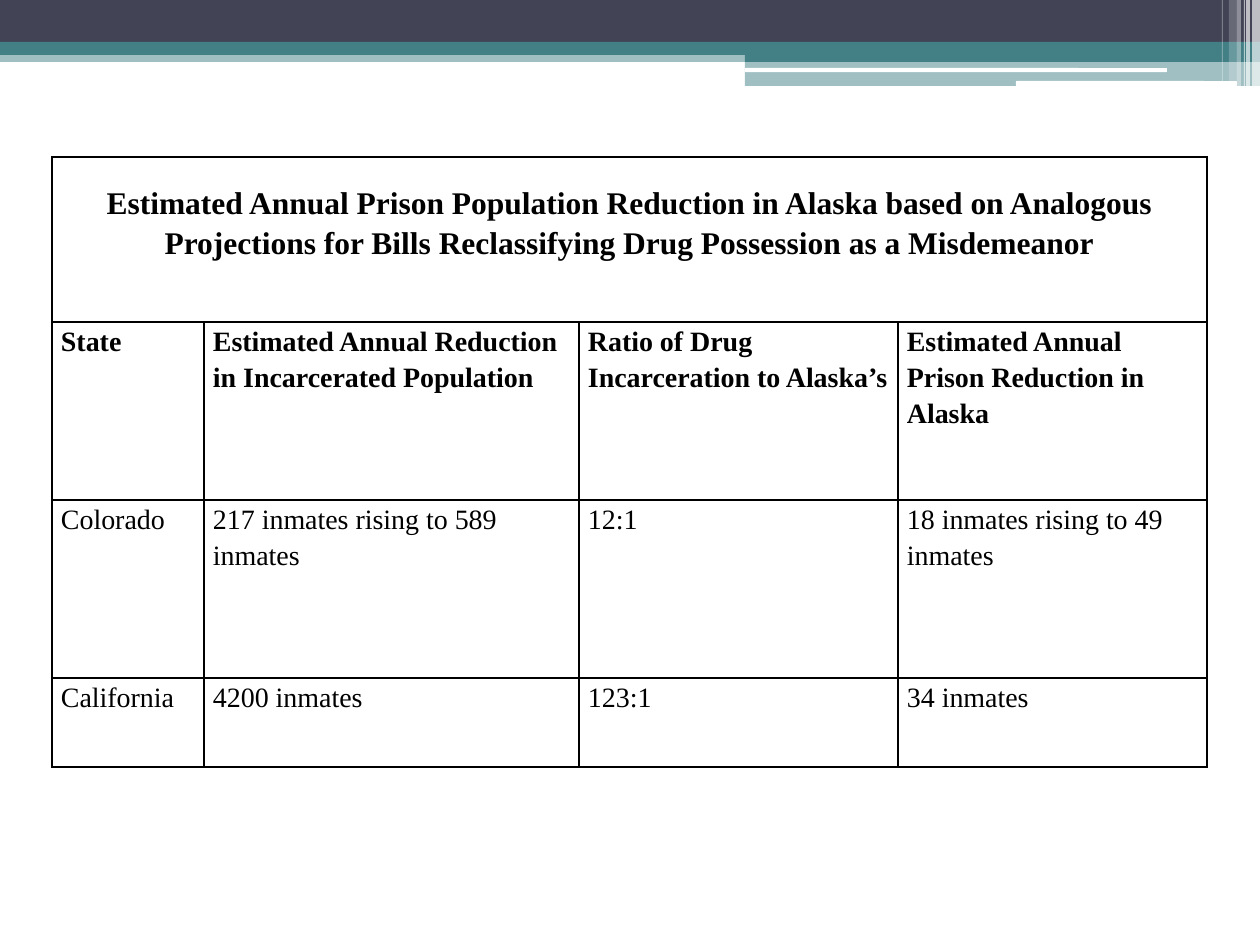
from lxml.etree import SubElement
from pptx import Presentation
from pptx.dml.color import RGBColor
from pptx.enum.shapes import MSO_SHAPE
from pptx.enum.text import PP_ALIGN
from pptx.oxml import parse_xml
from pptx.oxml.ns import nsdecls, qn
from pptx.util import Pt

PX = 914400 / 126
WHITE = RGBColor(0xFF, 0xFF, 0xFF)
BLACK = RGBColor(0, 0, 0)
SLATE = RGBColor(0x42, 0x44, 0x56)
TEAL = RGBColor(0x43, 0x80, 0x86)
FONT = "Times New Roman"

# Header bands, back to front: left, top, width, height, colour, opacity %
BANDS = [
    (0, 50, 1260, 12, TEAL, 50),
    (0, 0, 1260, 42, SLATE, 100),
    (0, 42, 1260, 13, TEAL, 100),
    (745, 49, 515, 13, TEAL, 100),
    (745, 62, 515, 24, TEAL, 50),
]
ROUNDED_BARS = [
    (745, 68, 422, 4, WHITE, 100),
    (1016, 81, 221, 5, WHITE, 100),
]
# Vertical stripes at the right: left, width, height, opacity %
STRIPES = [
    (1252, 8, 86, 65), (1246, 4, 86, 65), (1244, 1, 86, 60),
    (1237, 4, 86, 40), (1229, 8, 81, 20), (1222, 1, 81, 30),
]

TITLE = ("Estimated Annual Prison Population Reduction in Alaska based on Analogous "
         "Projections for Bills Reclassifying Drug Possession as a Misdemeanor")
HEADINGS = ["State", "Estimated Annual Reduction in Incarcerated Population",
            "Ratio of Drug Incarceration to Alaska’s",
            "Estimated Annual Prison Reduction in Alaska"]
STATES = [
    ["Colorado", "217 inmates rising to 589 inmates", "12:1",
     "18 inmates rising to 49 inmates"],
    ["California", "4200 inmates", "123:1", "34 inmates"],
]
TABLE_LEFT, TABLE_TOP = 52, 157
COLUMN_WIDTHS = [152, 375, 319, 309]
ROW_HEIGHTS = [165, 178, 178, 89]
CELL_MARGIN, TITLE_MARGIN = 9, 24


def px(length):
    return round(length * PX)


def add_band(slide, kind, left, top, width, height, color, opacity):
    band = slide.shapes.add_shape(kind, px(left), px(top), px(width), px(height))
    band.shadow.inherit = False
    band.line.fill.background()
    band.fill.solid()
    band.fill.fore_color.rgb = color
    if opacity < 100:
        tint = band.fill._xPr.find(qn("a:solidFill"))[0]
        SubElement(tint, qn("a:alpha")).set("val", str(opacity * 1000))


def write(frame, text, size=16, bold=False, align=PP_ALIGN.LEFT):
    paragraph = frame.paragraphs[0]
    paragraph.alignment = align
    paragraph.line_spacing = 1.15
    run = paragraph.add_run()
    run.text = text
    run.font.name = FONT
    run.font.size = Pt(size)
    run.font.bold = bold
    run.font.color.rgb = BLACK


def format_cell(cell, top_margin=0):
    cell.fill.background()
    cell.margin_left = cell.margin_right = px(CELL_MARGIN)
    cell.margin_top, cell.margin_bottom = px(top_margin), 0
    properties = cell._tc.get_or_add_tcPr()
    for place, side in enumerate(("lnL", "lnR", "lnT", "lnB")):
        properties.insert(place, parse_xml(
            f'<a:{side} {nsdecls("a")} w="{Pt(1)}"><a:solidFill>'
            f'<a:srgbClr val="{BLACK}"/></a:solidFill></a:{side}>'))


def main():
    deck = Presentation()
    deck.slide_width, deck.slide_height = px(1260), px(945)
    slide = deck.slides.add_slide(deck.slide_layouts[6])

    # Header decoration
    for band in BANDS:
        add_band(slide, MSO_SHAPE.RECTANGLE, *band)
    for bar in ROUNDED_BARS:
        add_band(slide, MSO_SHAPE.ROUNDED_RECTANGLE, *bar)
    for left, width, height, opacity in STRIPES:
        add_band(slide, MSO_SHAPE.RECTANGLE, left, 0, width, height, WHITE, opacity)

    # Table grid
    table = slide.shapes.add_table(
        len(ROW_HEIGHTS), len(COLUMN_WIDTHS), px(TABLE_LEFT), px(TABLE_TOP),
        px(sum(COLUMN_WIDTHS)), px(sum(ROW_HEIGHTS))).table
    table.horz_banding = False
    for column, width in zip(table.columns, COLUMN_WIDTHS):
        column.width = px(width)
    for row, height in zip(table.rows, ROW_HEIGHTS):
        row.height = px(height)

    # Title row across all columns
    title = table.cell(0, 0)
    title.merge(table.cell(0, len(COLUMN_WIDTHS) - 1))
    for cell in table.rows[0].cells:
        format_cell(cell, top_margin=TITLE_MARGIN)
    write(title.text_frame, TITLE, size=18, bold=True, align=PP_ALIGN.CENTER)

    # Headings and states
    for row, texts in enumerate([HEADINGS] + STATES, start=1):
        for column, text in enumerate(texts):
            cell = table.cell(row, column)
            format_cell(cell)
            write(cell.text_frame, text, bold=texts is HEADINGS)

    deck.save("out.pptx")


if __name__ == "__main__":
    main()
